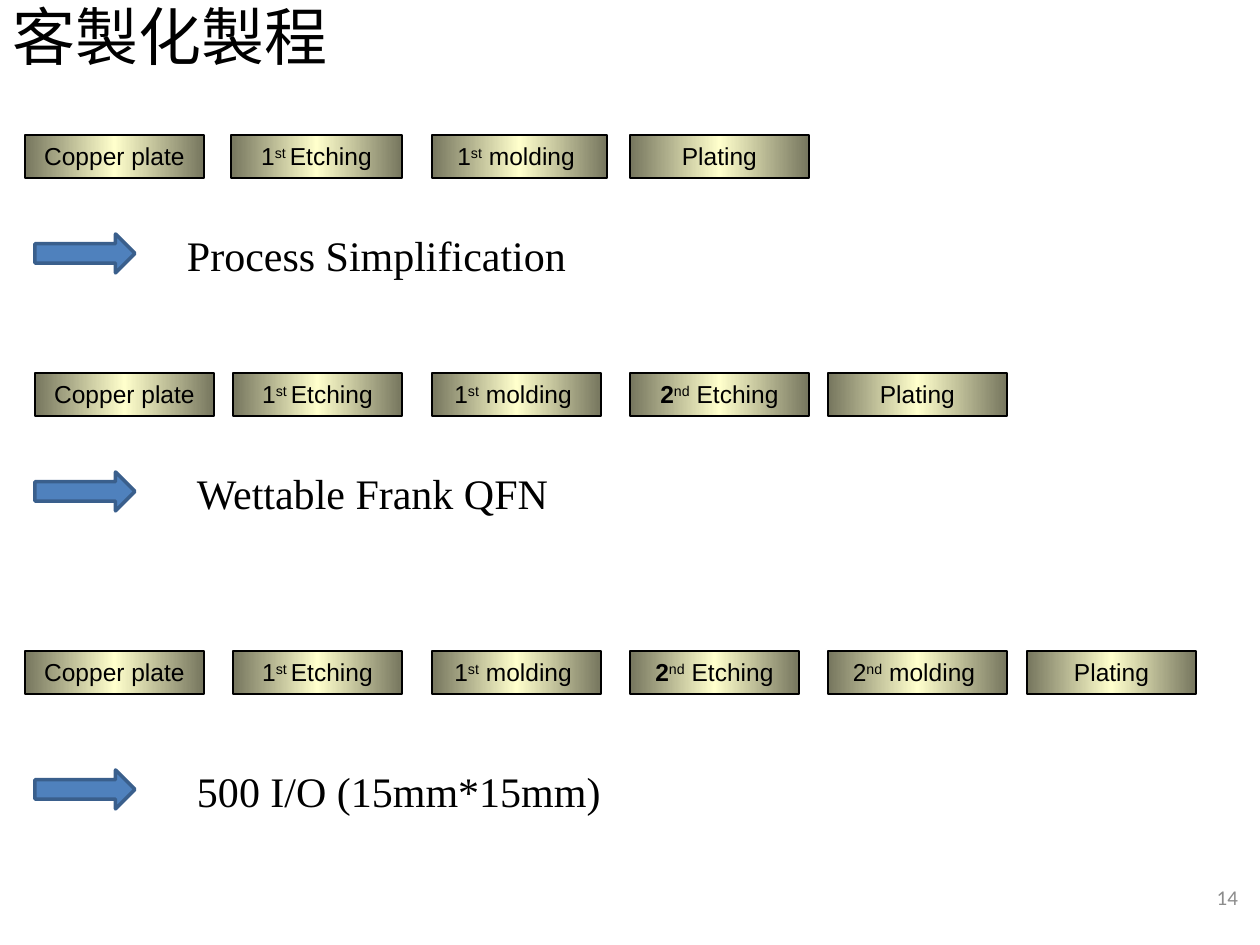
from copy import deepcopy

from lxml import etree
from pptx import Presentation
from pptx.dml.color import RGBColor
from pptx.enum.shapes import MSO_SHAPE
from pptx.enum.text import MSO_ANCHOR, MSO_AUTO_SIZE, PP_ALIGN
from pptx.oxml.ns import qn
from pptx.util import Emu, Pt

# Content: each step is a list of (text, style) runs
TITLE = "客製化製程"
PAGE_NUMBER = "14"
COPPER = [("Copper plate", "")]
ETCH_1 = [("1", ""), ("st ", "super"), ("Etching", "")]
MOLD_1 = [("1", ""), ("st", "super"), (" molding ", "")]
ETCH_2 = [("2", "bold"), ("nd", "super"), (" Etching", "")]
MOLD_2 = [("2", ""), ("nd", "super"), (" molding ", "")]
PLATING = [("Plating", "")]

# Each process: step top, steps as (runs, left, width), arrow top, result, result left and width
PROCESSES = [
    (135, [(COPPER, 25, 179), (ETCH_1, 231, 171), (MOLD_1, 432, 175), (PLATING, 630, 179)],
     234, "Process Simplification", 174, 704),
    (373, [(COPPER, 35, 179), (ETCH_1, 233, 169), (MOLD_1, 432, 169), (ETCH_2, 630, 179),
           (PLATING, 828, 179)],
     472, "Wettable Frank QFN", 184, 684),
    (651, [(COPPER, 25, 179), (ETCH_1, 233, 169), (MOLD_1, 432, 169), (ETCH_2, 630, 169),
           (MOLD_2, 828, 179), (PLATING, 1027, 169)],
     770, "500 I/O (15mm*15mm)", 184, 684),
]

COLORS = {"text": "000000", "edge": "76765E", "middle": "FFFFCC", "number": "8C8C8C",
          "arrow": "4F81BD", "arrow_line": "3A5F8C"}
STEP_HEIGHT = 43
ARROW_LEFT, ARROW_WIDTH, ARROW_HEIGHT = 35, 100, 39
RESULT_RISE, RESULT_HEIGHT = 10, 63


def px(length):
    return Emu(round(length * 914400 / 126))


def color(name):
    return RGBColor.from_string(COLORS[name])


def place(left, top, width, height):
    return px(left), px(top), px(width), px(height)


def write(box, runs, size, font, fill="text", align=PP_ALIGN.LEFT, anchor=MSO_ANCHOR.TOP,
          side_inset=13):
    frame = box.text_frame
    frame.word_wrap = True
    frame.auto_size = MSO_AUTO_SIZE.NONE
    frame.vertical_anchor = anchor
    frame.margin_left = frame.margin_right = px(side_inset)
    frame.margin_top = frame.margin_bottom = px(6)
    para = frame.paragraphs[0]
    para.alignment = align
    for text, style in runs:
        span = para.add_run()
        span.text = text
        span.font.size = Pt(size)
        span.font.name = font
        span.font.color.rgb = color(fill)
        span.font.bold = style == "bold"
        properties = span.font._element
        etree.SubElement(properties, qn("a:ea")).set("typeface", font)
        if style == "super":
            properties.set("baseline", "30000")


def add_block(page, kind, area, line, line_width):
    block = page.shapes.add_shape(kind, *area)
    block.shadow.inherit = False
    block.line.color.rgb = color(line)
    block.line.width = Pt(line_width)
    return block


def shade(block):
    block.fill.gradient()
    block.fill.gradient_angle = 0
    stop_list = block._element.spPr.find(".//" + qn("a:gsLst"))
    stop_list.append(deepcopy(stop_list[0]))
    names = ("edge", "middle", "edge")
    for stop, name, position in zip(block.fill.gradient_stops, names, (0, 0.5, 1)):
        stop.color.rgb = color(name)
        stop.position = position


def main():
    deck = Presentation()
    deck.slide_width, deck.slide_height = px(1260), px(945)
    page = deck.slides.add_slide(deck.slide_layouts[5])

    # Title and page number
    title = page.shapes.title
    title.left, title.top, title.width, title.height = place(0, 0, 978, 79)
    write(title, [(TITLE, "")], 36, "Noto Sans CJK SC", anchor=MSO_ANCHOR.BOTTOM)
    number = page.shapes.add_textbox(*place(1198, 872, 53, 50))
    write(number, [(PAGE_NUMBER, "")], 12, "Calibri", fill="number",
          align=PP_ALIGN.RIGHT, anchor=MSO_ANCHOR.MIDDLE)

    for step_top, steps, arrow_top, result, result_left, result_width in PROCESSES:
        # Process steps
        for runs, left, width in steps:
            step = add_block(page, MSO_SHAPE.RECTANGLE,
                             place(left, step_top, width, STEP_HEIGHT), "text", 0.75)
            shade(step)
            write(step, runs, 14, "Arial", align=PP_ALIGN.CENTER, side_inset=14)

        # Arrow and result
        arrow = add_block(page, MSO_SHAPE.RIGHT_ARROW,
                          place(ARROW_LEFT, arrow_top, ARROW_WIDTH, ARROW_HEIGHT),
                          "arrow_line", 2)
        arrow.fill.solid()
        arrow.fill.fore_color.rgb = color("arrow")
        label = page.shapes.add_textbox(
            *place(result_left, arrow_top - RESULT_RISE, result_width, RESULT_HEIGHT))
        write(label, [(result, "")], 24, "Times New Roman")

    deck.save("out.pptx")


if __name__ == "__main__":
    main()
